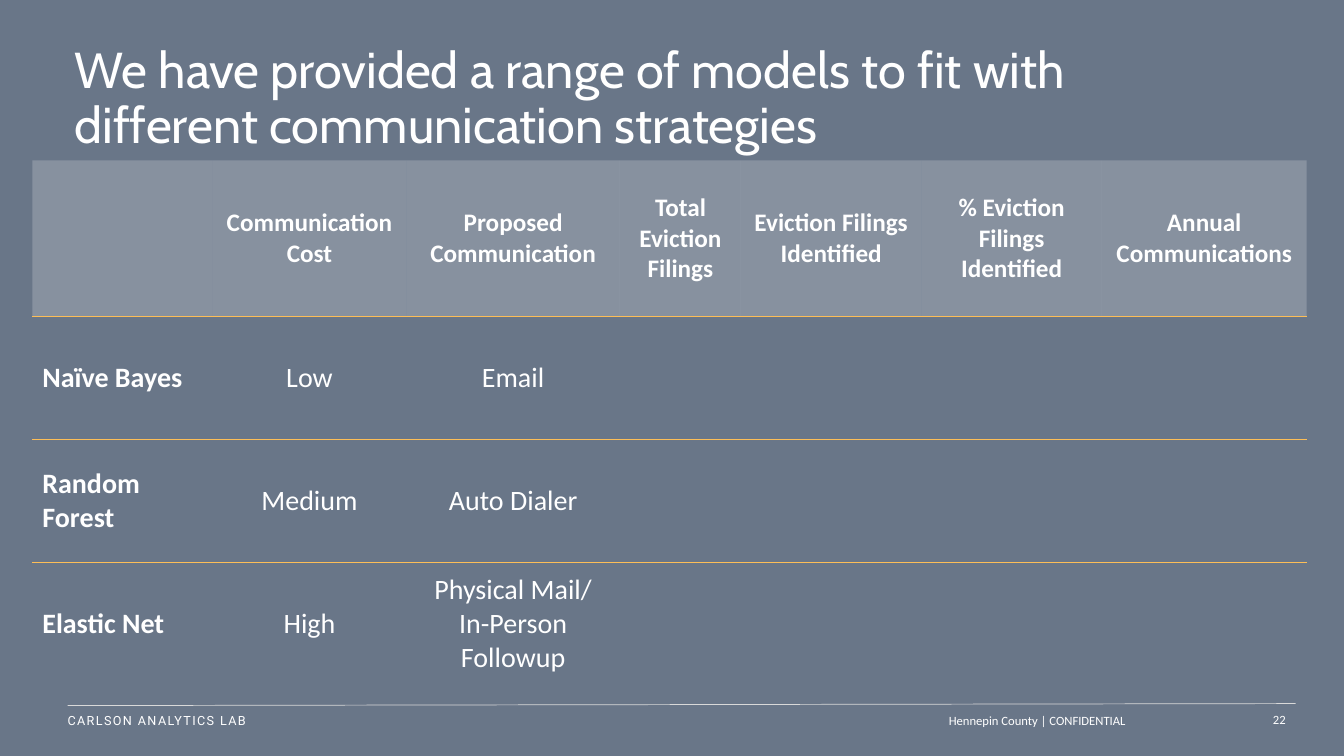
from typing import NamedTuple

from lxml import etree
from pptx import Presentation
from pptx.dml.color import RGBColor
from pptx.enum.shapes import MSO_CONNECTOR
from pptx.enum.text import MSO_ANCHOR, MSO_AUTO_SIZE, PP_ALIGN
from pptx.oxml import parse_xml
from pptx.oxml.ns import nsdecls, qn
from pptx.util import Inches, Pt

LEFT, MID, RIGHT = PP_ALIGN.LEFT, PP_ALIGN.CENTER, PP_ALIGN.RIGHT
CENTER = MSO_ANCHOR.MIDDLE
NO_FIT = MSO_AUTO_SIZE.NONE
STRAIGHT = MSO_CONNECTOR.STRAIGHT

WHITE, SLATE, GOLD, GRAY = "FFFFFF", "697688", "FDBE57", "D9D9D9"
PLAIN_STYLE = "{2D5ABB26-0587-4C30-8999-92F81FD0307C}"


class Label(NamedTuple):
    text: str
    left: float
    top: float
    width: float
    height: float
    font: str = "Calibri"
    align: PP_ALIGN = RIGHT
    inset: float = 0
    track: int = 0


LABELS = [
    Label("CARLSON ANALYTICS LAB", 0.67, 6.98, 3.24, 0.33, "Roboto", LEFT, track=100),
    Label("Hennepin County | CONFIDENTIAL", 5.32, 6.99, 5.94, 0.32, inset=0.1),
    Label("22", 12.4, 6.98, 0.45, 0.32),
]
COLS = [1.79, 1.92, 2.12, 1.2, 1.79, 1.79, 2.03]
ROWS = [1.55, 1.22, 1.22, 1.22]
CELLS = [
    ["", "Communication Cost", "Proposed Communication", "Total Eviction Filings",
     "Eviction Filings Identified", "% Eviction Filings Identified",
     "Annual Communications"],
    ["Naïve Bayes", "Low", "Email"],
    ["Random Forest", "Medium", "Auto Dialer"],
    ["Elastic Net", "High", "Physical Mail/\nIn-Person Followup"],
]


def color(value: str) -> RGBColor:
    return RGBColor.from_string(value)


def style(para, font: str, size: float, align: PP_ALIGN, bold: bool = False) -> None:
    para.alignment = align
    para.font.name = font
    para.font.size = Pt(size)
    para.font.bold = bold
    para.font.color.rgb = color(WHITE)


def add_label(slide, item: Label) -> None:
    box = slide.shapes.add_textbox(Inches(item.left), Inches(item.top),
                                   Inches(item.width), Inches(item.height))
    frame = box.text_frame
    frame.word_wrap = True
    frame.vertical_anchor = CENTER
    frame.margin_left = Inches(item.inset)
    frame.text = item.text
    para = frame.paragraphs[0]
    style(para, item.font, 9, item.align)
    if item.track:
        para.runs[0].font._element.set("spc", str(item.track))


def add_border(cell) -> None:
    line = parse_xml(
        f'<a:lnB {nsdecls("a")} w="{Pt(1)}"><a:solidFill>'
        f'<a:srgbClr val="{GOLD}"/></a:solidFill></a:lnB>')
    cell._tc.get_or_add_tcPr().insert(0, line)


def fill_cell(cell, row: int, col: int, text: str) -> None:
    head = row == 0
    cell.vertical_anchor = CENTER
    if head:
        cell.fill.solid()
        cell.fill.fore_color.rgb = color(WHITE)
        tint = cell._tc.tcPr.find(".//" + qn("a:srgbClr"))
        etree.SubElement(tint, qn("a:alpha")).set("val", "20000")
    else:
        cell.fill.background()
    if row < len(ROWS) - 1:
        add_border(cell)
    if text:
        cell.text = text
        for para in cell.text_frame.paragraphs:
            style(para, "Calibri", 18 if head else 20,
                  MID if head or col else LEFT, head or col == 0)


def add_grid(slide) -> None:
    frame = slide.shapes.add_table(len(ROWS), len(COLS), Inches(0.32), Inches(1.59),
                                   Inches(sum(COLS)), Inches(sum(ROWS)))
    table = frame.table
    table.horz_banding = False
    table._tbl.tblPr.find(qn("a:tableStyleId")).text = PLAIN_STYLE
    for col, width in zip(table.columns, COLS):
        col.width = Inches(width)
    for row, height in zip(table.rows, ROWS):
        row.height = Inches(height)
    for row, words in enumerate(CELLS):
        for col in range(len(COLS)):
            text = words[col] if col < len(words) else ""
            fill_cell(table.cell(row, col), row, col, text)


def add_title(slide) -> None:
    title = slide.shapes.title
    title.left, title.top = Inches(0.64), Inches(0.44)
    title.width, title.height = Inches(11.2), Inches(1.1)
    frame = title.text_frame
    frame.text = ("We have provided a range of models to fit with "
                  "different communication strategies")
    frame.auto_size = NO_FIT
    frame.word_wrap = True
    frame.vertical_anchor = CENTER
    para = frame.paragraphs[0]
    para.line_spacing = 0.9
    style(para, "Cabin", 36, LEFT)


def add_rule(slide) -> None:
    rule = slide.shapes.add_connector(STRAIGHT, Inches(0.67), Inches(7),
                                      Inches(12.85), Inches(6.98))
    rule.line.color.rgb = color(GRAY)
    rule.line.width = Pt(0.5)
    etree.SubElement(rule._element.spPr, qn("a:effectLst"))


def main() -> None:
    deck = Presentation()
    deck.slide_width, deck.slide_height = Inches(13.33), Inches(7.5)
    slide = deck.slides.add_slide(deck.slide_layouts[5])
    slide.background.fill.solid()
    slide.background.fill.fore_color.rgb = color(SLATE)

    # Heading and model table
    add_title(slide)
    add_grid(slide)

    # Footer
    add_rule(slide)
    for item in LABELS:
        add_label(slide, item)

    deck.save("out.pptx")


if __name__ == "__main__":
    main()
